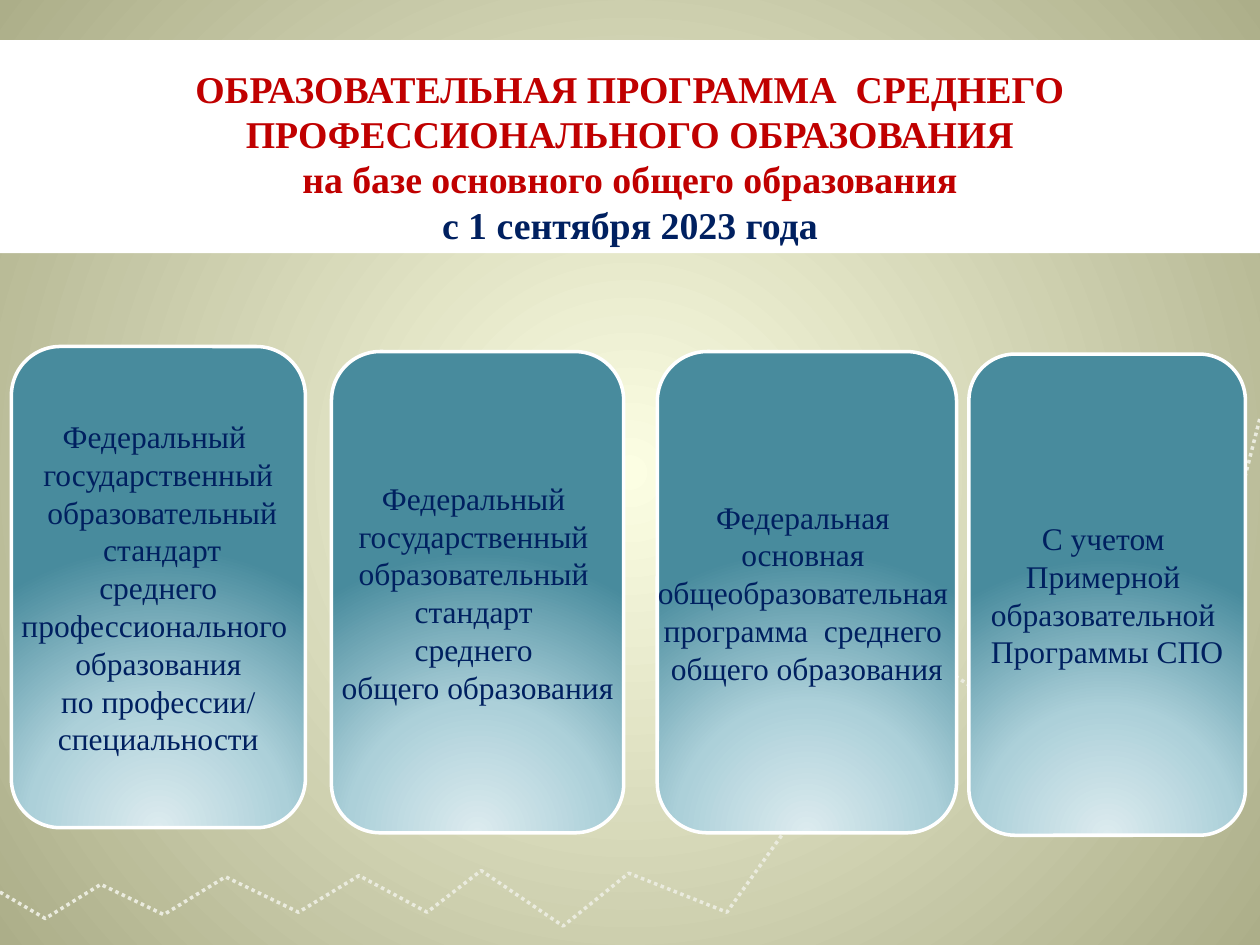
from lxml import etree
from pptx import Presentation
from pptx.dml.color import RGBColor as RGB
from pptx.enum.dml import MSO_LINE
from pptx.enum.shapes import MSO_SHAPE as SHAPE
from pptx.enum.text import MSO_ANCHOR as ANCHOR, MSO_AUTO_SIZE as FIT, PP_ALIGN as ALIGN
from pptx.oxml.ns import qn
from pptx.util import Pt

COLORS = {
    "white": "FFFFFF", "navy": "002060", "red": "C00000", "zigzag": "EAEBDE",
    "bg_in": "FCFEE3", "bg_out": "ACAE89",
    "card_in": "DCEBEF", "card_mid": "ACD0D9", "card_out": "488B9D",
}


class Deck:
    font = "Times New Roman"

    def __init__(self, width, height):
        self.prs = Presentation()
        self.prs.slide_width, self.prs.slide_height = Pt(width), Pt(height)
        self.s = self.prs.slides.add_slide(self.prs.slide_layouts[5])

    def color(self, name):
        return RGB.from_string(COLORS[name])

    def radial(self, fill, root, stops, focus):
        fill.gradient()
        grad = next(root.iter(qn("a:gradFill")))
        for child in list(grad):
            grad.remove(child)
        gs_list = etree.SubElement(grad, qn("a:gsLst"))
        for pos, name in stops:
            gs = etree.SubElement(gs_list, qn("a:gs"), pos=str(pos * 1000))
            etree.SubElement(gs, qn("a:srgbClr"), val=COLORS[name])
        path = etree.SubElement(grad, qn("a:path"), path="circle")
        sides = {side: str(v * 1000) for side, v in zip("ltrb", focus)}
        etree.SubElement(path, qn("a:fillToRect"), **sides)

    def background(self, stops):
        self.radial(self.s.background.fill, self.s.element, stops, (50, 50, 50, 50))

    def outline(self, sp, name):
        sp.shadow.inherit = False
        sp.line.color.rgb = self.color(name)
        sp.line.width = Pt(2)

    def style(self, r, size, name, bold=False):
        r.font.name, r.font.size, r.font.bold = self.font, Pt(size), bold
        r.font.color.rgb = self.color(name)

    def zigzag(self, points):
        pts = [(Pt(x), Pt(y)) for x, y in points]
        builder = self.s.shapes.build_freeform(*pts[0], scale=1.0)
        builder.add_line_segments(pts[1:], close=False)
        sp = builder.convert_to_shape()
        sp.fill.background()
        self.outline(sp, "zigzag")
        sp.line.dash_style = MSO_LINE.ROUND_DOT

    def card(self, left, top, width, height, lines):
        sp = self.s.shapes.add_shape(SHAPE.ROUNDED_RECTANGLE, Pt(left), Pt(top), Pt(width), Pt(height))
        stops = [(0, "card_in"), (46, "card_mid"), (100, "card_out")]
        self.radial(sp.fill, sp.element, stops, (50, 130, 50, -30))
        self.outline(sp, "white")
        tf = sp.text_frame
        tf.text = "\n".join(lines)
        tf.word_wrap, tf.vertical_anchor = False, ANCHOR.MIDDLE
        for p in tf.paragraphs:
            p.alignment = ALIGN.CENTER
            for r in p.runs:
                self.style(r, 18, "navy")

    def title(self, left, top, width, height, lines):
        sp = self.s.shapes.title
        sp.left, sp.top, sp.width, sp.height = Pt(left), Pt(top), Pt(width), Pt(height)
        sp.fill.solid()
        sp.fill.fore_color.rgb = self.color("white")
        tf = sp.text_frame
        tf.word_wrap, tf.auto_size, tf.vertical_anchor = True, FIT.NONE, ANCHOR.BOTTOM
        p = tf.paragraphs[0]
        p.text = "\v".join(text for text, name in lines)
        p.alignment = ALIGN.CENTER
        for r, (text, name) in zip(p.runs, lines):
            self.style(r, 21.6, name, bold=True)


ZIGZAG = [
    (0, 509.8), (25.9, 524.9), (57.6, 505.4), (93.6, 522.7), (128.9, 501.1),
    (170.6, 521.3), (205.2, 500.4), (244.1, 521.3), (275, 497.5), (321.8, 529.2),
    (359.3, 499), (415.4, 521.3), (522.7, 370.8), (662.4, 464.4), (720, 239),
]

CARDS = [
    (6.5, 198, 168, [
        "Федеральный ", "государственный", " образовательный", " стандарт", " среднего ",
        "профессионального ", "образования", " по профессии/ ", "специальности"]),
    (189.4, 200.9, 167, [
        "Федеральный ", "государственный ", "образовательный ", "стандарт ", "среднего ",
        "общего образования"]),
    (375.6, 200.9, 171, [
        "Федеральная ", "основная ", "общеобразовательная ", "программа  среднего ",
        "общего образования"]),
    (553.7, 202.3, 158, [
        "С учетом ", "Примерной ", "образовательной ", "Программы СПО"]),
]

TITLE = [
    ("ОБРАЗОВАТЕЛЬНАЯ ПРОГРАММА  СРЕДНЕГО ПРОФЕССИОНАЛЬНОГО ОБРАЗОВАНИЯ", "red"),
    ("на базе основного общего образования", "red"),
    ("с 1 сентября 2023 года", "navy"),
]


def main():
    deck = Deck(720, 540)
    deck.background([(0, "bg_in"), (100, "bg_out")])
    deck.zigzag(ZIGZAG)
    for left, top, width, lines in CARDS:
        deck.card(left, top, width, 275, lines)
    deck.title(0, 23, 720, 121.7, TITLE)
    deck.prs.save("out.pptx")


if __name__ == "__main__":
    main()
